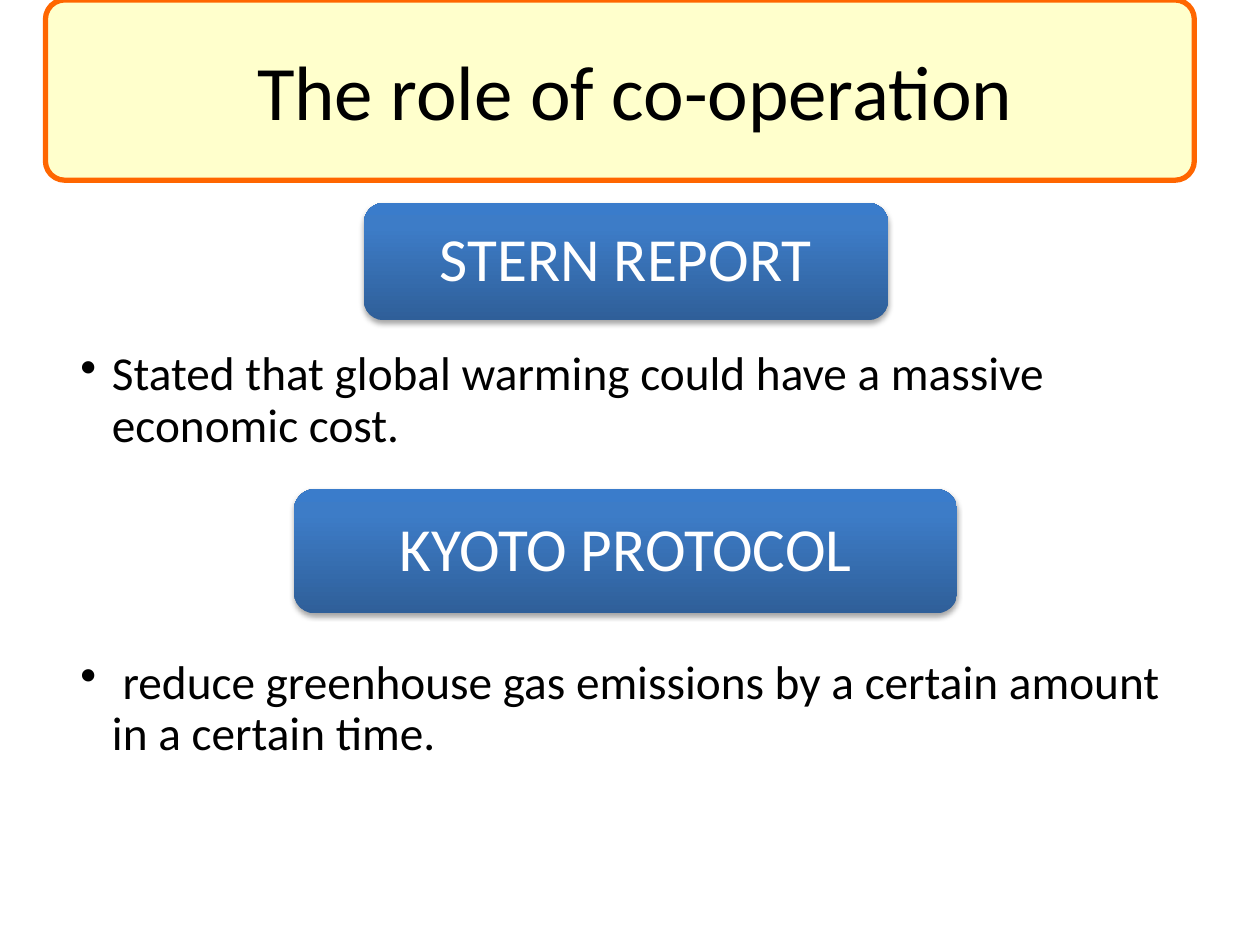
from copy import deepcopy
from dataclasses import dataclass

from lxml.etree import SubElement
from pptx import Presentation
from pptx.dml.color import RGBColor
from pptx.enum.shapes import MSO_SHAPE
from pptx.enum.text import MSO_ANCHOR, PP_ALIGN
from pptx.oxml.ns import qn
from pptx.util import Pt

FONT = "Calibri"
COLORS = {
    "text": "000000",
    "light": "FFFFFF",
    "banner": "FFFFCC",
    "border": "FF6600",
    "shadow": "000000",
}
GRADIENT = [(0, "2F5F99"), (0.8, "3D7CC7"), (1, "3A7CCB")]


@dataclass
class Area:
    left: float
    top: float
    width: float
    height: float

    def lengths(self) -> list:
        return [Pt(v) for v in (self.left, self.top, self.width, self.height)]


@dataclass
class Topic:
    heading: str
    heading_area: Area
    detail: str
    detail_top: float


TOPICS = [
    Topic("STERN REPORT", Area(208, 116, 299.5, 67),
          "Stated that global warming could have a massive economic cost.", 196.5),
    Topic("KYOTO PROTOCOL", Area(168, 279.5, 379, 71),
          " reduce greenhouse gas emissions by a certain amount in a certain time.", 373),
]


def color(name: str) -> RGBColor:
    return RGBColor.from_string(COLORS[name])


def write(shape, text: str, *, size: float, ink: str = "text", align=PP_ALIGN.CENTER,
          anchor=MSO_ANCHOR.MIDDLE, insets=(7.2, 3.6, 7.2, 3.6),
          line_spacing: float = 1.0, bullet: bool = False) -> None:
    """Fill a shape with one paragraph; insets run left, top, right, bottom."""
    frame = shape.text_frame
    frame.word_wrap = True
    frame.vertical_anchor = anchor
    (frame.margin_left, frame.margin_top,
     frame.margin_right, frame.margin_bottom) = [Pt(v) for v in insets]
    para = frame.paragraphs[0]
    para.alignment = align
    para.line_spacing = line_spacing
    if bullet:
        properties = para._p.get_or_add_pPr()
        properties.set("marL", str(Pt(18)))
        properties.set("indent", str(-Pt(18)))
        SubElement(properties, qn("a:buChar"), char="•")
    span = para.add_run()
    span.text = text
    span.font.name = FONT
    span.font.size = Pt(size)
    span.font.color.rgb = color(ink)


def add_rounded_box(page, area: Area):
    box = page.shapes.add_shape(MSO_SHAPE.ROUNDED_RECTANGLE, *area.lengths())
    box.shadow.inherit = False
    return box


def add_banner(page) -> None:
    banner = add_rounded_box(page, Area(26, 0, 656.5, 103))
    banner.adjustments[0] = 0.107
    banner.fill.solid()
    banner.fill.fore_color.rgb = color("banner")
    banner.line.color.rgb = color("border")
    banner.line.width = Pt(3)
    title = page.shapes.add_textbox(*Area(39, 6.5, 648, 90).lengths())
    write(title, "The role of co-operation", size=44)


def shade(box) -> None:
    """Give a box the vertical blue gradient, dark at the bottom."""
    box.fill.gradient()
    box.fill.gradient_angle = 90
    stop_list = box._element.spPr.find(".//" + qn("a:gsLst"))
    stop_list.append(deepcopy(stop_list[0]))
    for stop, (position, value) in zip(box.fill.gradient_stops, GRADIENT):
        stop.position = position
        stop.color.rgb = RGBColor.from_string(value)


def drop_shadow(box) -> None:
    effects = box._element.spPr.find(qn("a:effectLst"))
    shadow = SubElement(effects, qn("a:outerShdw"), blurRad=str(Pt(3.1)),
                        dist=str(Pt(1.8)), dir="5400000", rotWithShape="0")
    tint = SubElement(shadow, qn("a:srgbClr"), val=COLORS["shadow"])
    SubElement(tint, qn("a:alpha"), val="35000")


def add_topic(page, topic: Topic) -> None:
    box = add_rounded_box(page, topic.heading_area)
    shade(box)
    box.line.fill.background()
    drop_shadow(box)
    write(box, topic.heading, size=35, ink="light", insets=(11,) * 4, line_spacing=0.9)
    detail = page.shapes.add_textbox(*Area(25, topic.detail_top, 664.5, 96).lengths())
    write(detail, topic.detail, size=27, align=PP_ALIGN.LEFT, anchor=MSO_ANCHOR.TOP,
          insets=(21, 3.6, 19.5, 3.6), line_spacing=0.9, bullet=True)


def main() -> None:
    deck = Presentation()
    deck.slide_width, deck.slide_height = Pt(720), Pt(540)
    page = deck.slides.add_slide(deck.slide_layouts[6])
    add_banner(page)
    for topic in TOPICS:
        add_topic(page, topic)
    deck.save("out.pptx")


if __name__ == "__main__":
    main()
